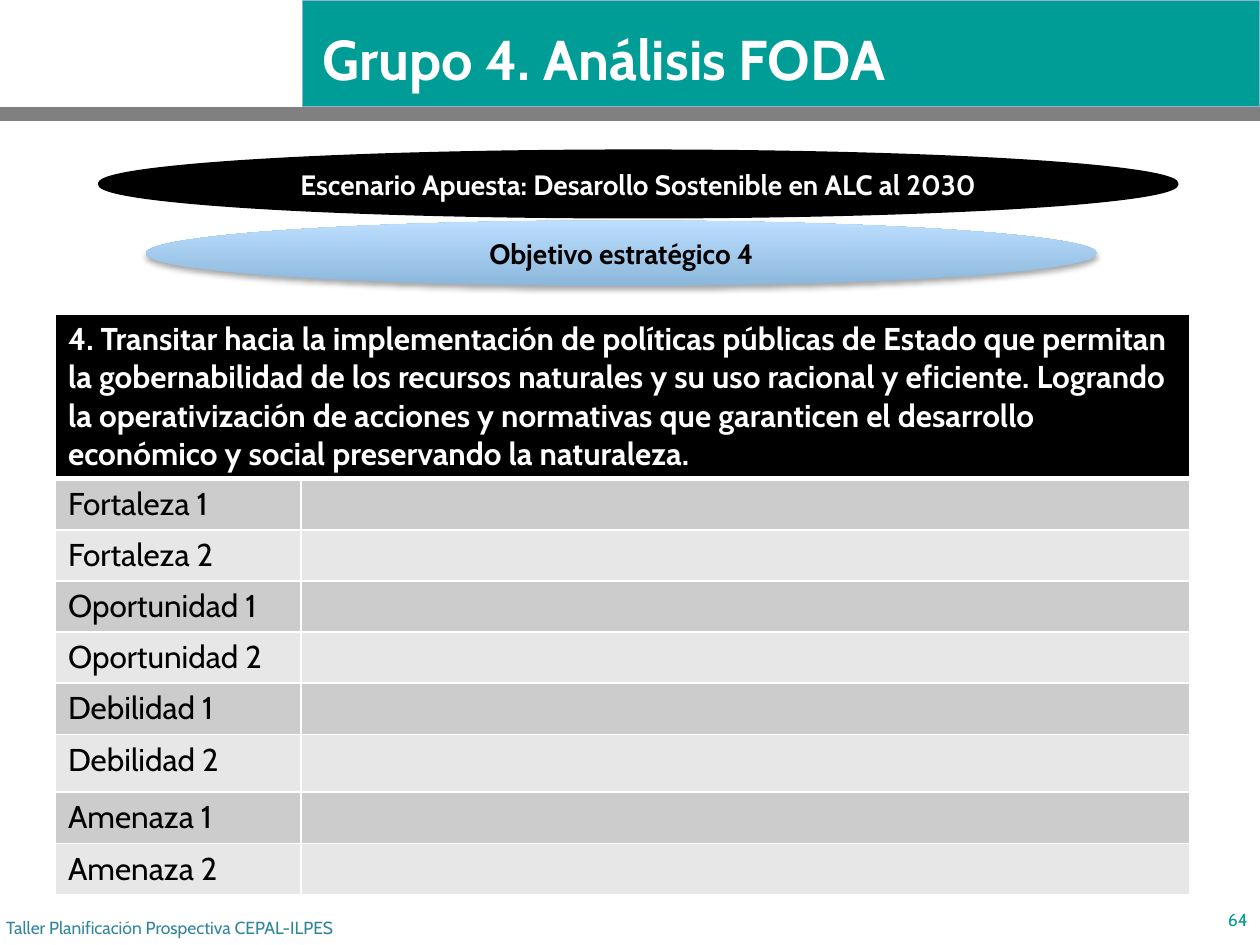
from typing import NamedTuple

from lxml import etree
from pptx import Presentation
from pptx.dml.color import RGBColor
from pptx.enum.shapes import MSO_SHAPE
from pptx.enum.text import MSO_ANCHOR, PP_ALIGN
from pptx.oxml import parse_xml
from pptx.oxml.ns import nsdecls, qn
from pptx.util import Inches, Pt

RECTANGLE, OVAL = MSO_SHAPE.RECTANGLE, MSO_SHAPE.OVAL
TOP, MIDDLE = MSO_ANCHOR.TOP, MSO_ANCHOR.MIDDLE
LEFT, CENTER, RIGHT = PP_ALIGN.LEFT, PP_ALIGN.CENTER, PP_ALIGN.RIGHT

WHITE = RGBColor(0xFF, 0xFF, 0xFF)
BLACK = RGBColor(0x00, 0x00, 0x00)
TEAL = RGBColor(0x00, 0x9D, 0x96)
PALE_BLUE = RGBColor(0x8F, 0xB2, 0xCF)
GRAY = RGBColor(0x80, 0x80, 0x80)
FOOTER_BLUE = RGBColor(0x31, 0x85, 0x9C)
GOAL_DARK = RGBColor(0x8B, 0xB7, 0xDB)
GOAL_LIGHT = RGBColor(0xBD, 0xDF, 0xFF)
BANDS = (RGBColor(0xCC, 0xCC, 0xCC), RGBColor(0xE7, 0xE7, 0xE7))

FONT = "Cabin"
SLIDE_WIDTH, SLIDE_HEIGHT = Inches(10), Inches(7.5)
COLUMN, ROW = SLIDE_WIDTH / 100, SLIDE_HEIGHT / 75

STRATEGY = (
    "4. Transitar hacia la implementación de políticas públicas de Estado que permitan "
    "la gobernabilidad de los recursos naturales y su uso racional y eficiente. Logrando "
    "la operativización de acciones y normativas que garanticen el desarrollo "
    "económico y social preservando la naturaleza."
)
FACTORS = [f"{name} {number}"
           for name in ("Fortaleza", "Oportunidad", "Debilidad", "Amenaza")
           for number in (1, 2)]


class Box(NamedTuple):
    """A region measured in grid columns and rows."""
    left: float
    top: float
    width: float
    height: float

    def inner(self, left, top, width, height):
        """Return a box placed by shares of this one."""
        return Box(self.left + left * self.width, self.top + top * self.height,
                   width * self.width, height * self.height)

    def lengths(self):
        """Return left, top, width and height in slide units."""
        return (round(self.left * COLUMN), round(self.top * ROW),
                round(self.width * COLUMN), round(self.height * ROW))


def write(frame, text, size=18, color=BLACK, bold=False, align=LEFT, anchor=MIDDLE):
    """Write one formatted paragraph in a text frame."""
    frame.word_wrap = True
    frame.vertical_anchor = anchor
    para = frame.paragraphs[0]
    para.alignment = align
    span = para.add_run()
    span.text = text
    span.font.name, span.font.size, span.font.bold = FONT, Pt(size), bold
    span.font.color.rgb = color


def add_label(page, box, text, **style):
    """Add a text box."""
    write(page.shapes.add_textbox(*box.lengths()).text_frame, text, **style)


def add_block(page, kind, box, fill=None, line=None, line_width=1):
    """Add a flat preset shape."""
    shape = page.shapes.add_shape(kind, *box.lengths())
    shape.shadow.inherit = False
    if fill is not None:
        shape.fill.solid()
        shape.fill.fore_color.rgb = fill
    if line is None:
        shape.line.fill.background()
    else:
        shape.line.color.rgb = line
        shape.line.width = Pt(line_width)
    return shape


def add_header(page, box):
    """Draw the title band and the rule under it."""
    add_block(page, RECTANGLE, box.inner(0.24, 0, 0.76, 0.885), TEAL, PALE_BLUE, 0.75)
    add_block(page, RECTANGLE, box.inner(0, 0.885, 1, 0.115), GRAY)
    add_label(page, box.inner(0.246, -0.04, 0.74, 1.04), "Grupo 4. Análisis FODA",
              size=32, color=WHITE, bold=True)


def add_scenario(page, box):
    """Draw the scenario ellipse above the shaded goal ellipse."""
    scenario = add_block(page, OVAL, box.inner(0, 0, 1, 0.486), BLACK, BLACK, 2)
    write(scenario.text_frame, "Escenario Apuesta: Desarollo Sostenible en ALC al 2030",
          size=16, color=WHITE, bold=True, align=CENTER)
    goal = add_block(page, OVAL, box.inner(0.043, 0.514, 0.883, 0.486))
    goal.fill.gradient()
    goal.fill.gradient_angle = 90
    for stop, color in zip(goal.fill.gradient_stops, (GOAL_DARK, GOAL_LIGHT)):
        stop.color.rgb = color
    goal.element.spPr.find(qn("a:effectLst")).append(parse_xml(
        f'<a:outerShdw {nsdecls("a")} blurRad="{Pt(3.1)}" dist="{Pt(1.8)}" dir="5400000" '
        'rotWithShape="0"><a:srgbClr val="000000"><a:alpha val="35000"/></a:srgbClr>'
        '</a:outerShdw>'))
    write(goal.text_frame, "Objetivo estratégico 4", size=16, bold=True, align=CENTER)


def format_cell(cell, fill, bottom=1, top=1):
    """Give a cell white borders and a solid fill."""
    properties = cell._tc.get_or_add_tcPr()
    for side, width in (("L", 1), ("R", 1), ("T", top), ("B", bottom)):
        border = etree.SubElement(properties, qn(f"a:ln{side}"), w=str(Pt(width)))
        paint = etree.SubElement(border, qn("a:solidFill"))
        etree.SubElement(paint, qn("a:srgbClr"), val=str(WHITE))
    cell.fill.solid()
    cell.fill.fore_color.rgb = fill


def add_factors(page, box):
    """Build the table with the strategy above its factors."""
    frame = page.shapes.add_table(len(FACTORS) + 1, 2, *box.lengths())
    table = frame.table
    label_width, header_height, tall_height, tall_row = 19.5, 13.1, 4.6, 6
    table.columns[0].width = round(label_width * COLUMN)
    table.columns[1].width = round((box.width - label_width) * COLUMN)
    plain_height = (box.height - header_height - tall_height) / (len(FACTORS) - 1)
    for index, row in enumerate(table.rows):
        height = {0: header_height, tall_row: tall_height}.get(index, plain_height)
        row.height = round(height * ROW)
        for cell in row.cells:
            format_cell(cell, BANDS[(index - 1) % 2] if index else BLACK,
                        bottom=1 if index else 3, top=3 if index == 1 else 1)
    header = table.cell(0, 0)
    header.merge(table.cell(0, 1))
    write(header.text_frame, STRATEGY, color=WHITE, bold=True, anchor=TOP)
    for index, factor in enumerate(FACTORS, start=1):
        write(table.cell(index, 0).text_frame, factor, anchor=TOP)


def add_footer(page, box):
    """Place the workshop name and the page number."""
    add_label(page, box.inner(-0.005, 0.13, 0.6, 0.87),
              "Taller Planificación Prospectiva CEPAL-ILPES", size=10, color=FOOTER_BLUE)
    add_label(page, box.inner(0.95, 0, 0.05, 0.87), "64", size=10, color=TEAL, align=RIGHT)


def main():
    """Build and save the deck."""
    deck = Presentation()
    deck.slide_width, deck.slide_height = SLIDE_WIDTH, SLIDE_HEIGHT
    page = deck.slides.add_slide(deck.slide_layouts[6])
    add_header(page, Box(0, 0, 100, 9.6))
    add_factors(page, Box(4.4, 24.9, 90, 46.1))
    add_footer(page, Box(0, 71, 100, 4.6))
    add_scenario(page, Box(7.9, 12, 85.5, 10.7))
    deck.save("out.pptx")


if __name__ == "__main__":
    main()
